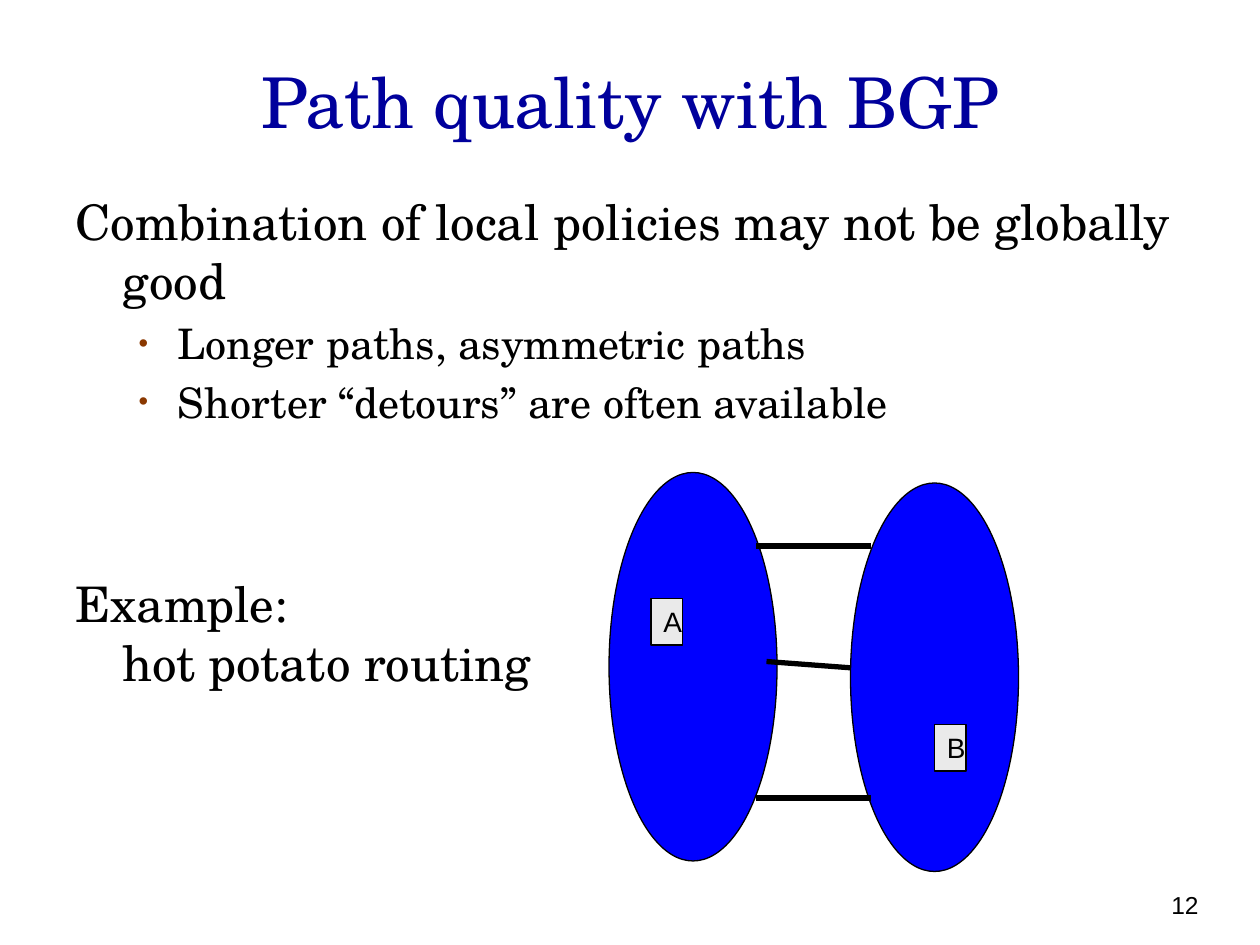
from copy import deepcopy
from dataclasses import dataclass

from lxml import etree
from pptx import Presentation
from pptx.dml.color import RGBColor
from pptx.enum.shapes import MSO_CONNECTOR, MSO_SHAPE
from pptx.enum.text import MSO_ANCHOR, MSO_AUTO_SIZE, PP_ALIGN
from pptx.oxml.ns import qn
from pptx.util import Pt

OVAL, RECT = MSO_SHAPE.OVAL, MSO_SHAPE.RECTANGLE
LINE = MSO_CONNECTOR.STRAIGHT
MIDDLE, BOTTOM = MSO_ANCHOR.MIDDLE, MSO_ANCHOR.BOTTOM
LEFT, CENTER, RIGHT = PP_ALIGN.LEFT, PP_ALIGN.CENTER, PP_ALIGN.RIGHT
FIXED, GROW = MSO_AUTO_SIZE.NONE, MSO_AUTO_SIZE.SHAPE_TO_FIT_TEXT


@dataclass(frozen=True)
class Theme:
    serif: str = "TeX Gyre Schola"
    sans: str = "Arial"
    title: str = "00009C"
    ink: str = "000000"
    bullet: str = "8A3800"
    cloud: str = "0000FF"
    tag: str = "EAEAEA"
    title_size: float = 40
    sizes: tuple = (28, 24)
    tag_size: float = 16
    page_size: float = 14


@dataclass(frozen=True)
class Item:
    text: str
    level: int = 0
    gap: float = 0


@dataclass(frozen=True)
class Node:
    kind: MSO_SHAPE
    left: float
    top: float
    width: float
    height: float
    fill: str
    text: str = ""


@dataclass(frozen=True)
class Link:
    x1: float
    y1: float
    x2: float
    y2: float


THEME = Theme()
ITEMS = [
    Item("Combination of local policies may not be globally good"),
    Item("Longer paths, asymmetric paths", 1),
    Item("Shorter “detours” are often available", 1),
    Item("Example: \nhot potato routing", gap=78.4),
]
NODES = [
    Node(OVAL, 348, 270, 96, 222, THEME.cloud),
    Node(OVAL, 486, 276, 96, 222, THEME.cloud),
    Node(RECT, 372, 342, 18, 26.6, THEME.tag, "A"),
    Node(RECT, 534, 414, 18, 26.6, THEME.tag, "B"),
]
LINKS = [
    Link(432, 312, 498, 312),
    Link(438, 378, 486, 381.6),
    Link(432, 456, 498, 456),
]


def apply(target, values: dict) -> None:
    for name, value in values.items():
        setattr(target, name, value)


def place(shape, left: float, top: float, width: float, height: float) -> None:
    apply(shape, {"left": Pt(left), "top": Pt(top),
                  "width": Pt(width), "height": Pt(height)})


def write(para, text: str, face: str, size: float, color: str, align) -> None:
    """Set a paragraph's text, giving line breaks the same size as the runs."""
    para.text = text
    para.alignment = align
    for run in para.runs:
        apply(run.font, {"name": face, "size": Pt(size)})
        run.font.color.rgb = RGBColor.from_string(color)
    for gap in para._p.findall(qn("a:br")):
        gap.append(deepcopy(para.runs[0].font._element))


def mark(para, level: int) -> None:
    """Hang the paragraph's first line and set its bullet."""
    props = para._p.get_or_add_pPr()
    left, hang = ((27, 27), (58.5, 22.5))[level]
    props.set("marL", str(Pt(left)))
    props.set("indent", str(-Pt(hang)))
    if level == 0:
        etree.SubElement(props, qn("a:buNone"))
        return
    tint = etree.SubElement(props, qn("a:buClr"))
    etree.SubElement(tint, qn("a:srgbClr"), val=THEME.bullet)
    etree.SubElement(props, qn("a:buSzPct"), val="65000")
    etree.SubElement(props, qn("a:buChar"), char="•")


def fill_body(frame, items: list[Item]) -> None:
    apply(frame, {"auto_size": FIXED, "word_wrap": True})
    for i, item in enumerate(items):
        para = frame.paragraphs[0] if i == 0 else frame.add_paragraph()
        size = THEME.sizes[item.level]
        write(para, item.text, THEME.serif, size, THEME.ink, LEFT)
        apply(para, {"level": item.level,
                     "space_before": Pt(size * 0.2 + item.gap)})
        mark(para, item.level)


def draw_node(shapes, node: Node) -> None:
    shape = shapes.add_shape(node.kind, 0, 0, 0, 0)
    place(shape, node.left, node.top, node.width, node.height)
    shape.shadow.inherit = False
    shape.fill.solid()
    shape.fill.fore_color.rgb = RGBColor.from_string(node.fill)
    shape.line.color.rgb = RGBColor.from_string(THEME.ink)
    shape.line.width = Pt(0.75)
    if node.text:
        frame = shape.text_frame
        apply(frame, {"word_wrap": True, "auto_size": GROW,
                      "vertical_anchor": MIDDLE})
        write(frame.paragraphs[0], node.text, THEME.sans, THEME.tag_size,
              THEME.ink, CENTER)


def draw_link(shapes, link: Link) -> None:
    line = shapes.add_connector(LINE, Pt(link.x1), Pt(link.y1),
                                Pt(link.x2), Pt(link.y2))
    line.line.color.rgb = RGBColor.from_string(THEME.ink)
    line.line.width = Pt(3)
    etree.SubElement(line._element.spPr, qn("a:effectLst"))


def main() -> None:
    deck = Presentation()
    apply(deck, {"slide_width": Pt(720), "slide_height": Pt(540)})
    slide = deck.slides.add_slide(deck.slide_layouts[1])
    shapes = slide.shapes

    title, body = slide.placeholders
    place(title, 36, 23, 648, 68.4)
    apply(title.text_frame, {"auto_size": FIXED, "vertical_anchor": MIDDLE})
    write(title.text_frame.paragraphs[0], "Path quality with BGP",
          THEME.serif, THEME.title_size, THEME.title, CENTER)
    place(body, 36, 105.8, 648, 392.4)
    fill_body(body.text_frame, ITEMS)

    page = shapes.add_textbox(0, 0, 0, 0)
    place(page, 524, 491.8, 168, 37.4)
    apply(page.text_frame, {"word_wrap": True, "vertical_anchor": BOTTOM})
    write(page.text_frame.paragraphs[0], "12", THEME.sans, THEME.page_size,
          THEME.ink, RIGHT)

    for node in NODES:
        draw_node(shapes, node)
    for link in LINKS:
        draw_link(shapes, link)
    deck.save("out.pptx")


if __name__ == "__main__":
    main()
